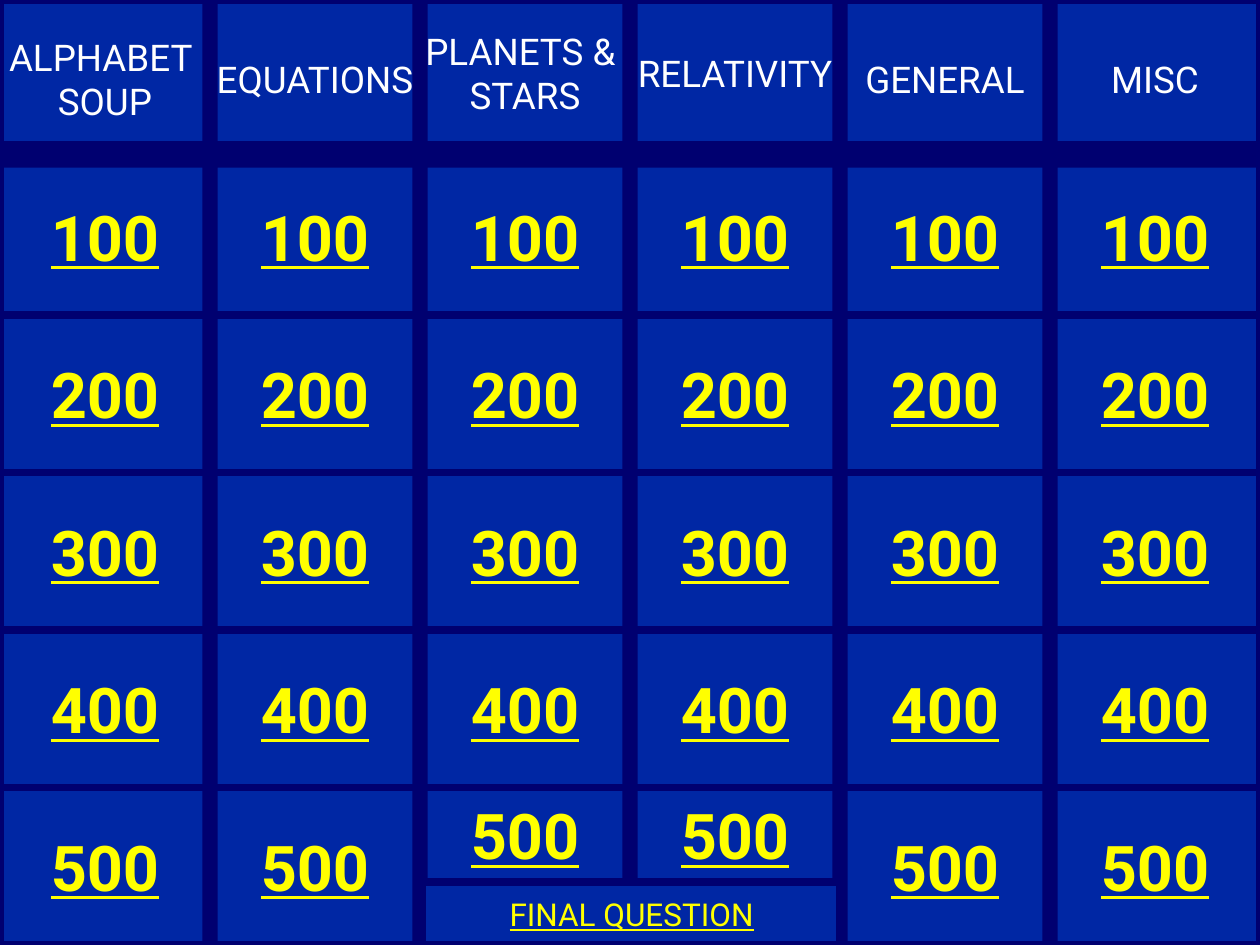
from pptx import Presentation
from pptx.dml.color import RGBColor
from pptx.enum.shapes import MSO_SHAPE
from pptx.enum.text import MSO_ANCHOR, PP_ALIGN
from pptx.util import Inches, Pt

RECTANGLE = MSO_SHAPE.RECTANGLE
BUTTON = MSO_SHAPE.ACTION_BUTTON_CUSTOM
MIDDLE = MSO_ANCHOR.MIDDLE
CENTER = PP_ALIGN.CENTER

# "\v" breaks a line, "\n" starts a paragraph
CATEGORIES = ["ALPHABET \vSOUP", "EQUATIONS", "PLANETS & \nSTARS",
              "RELATIVITY", "GENERAL", "MISC"]
POINTS = ["100", "200", "300", "400", "500"]
FINAL_ROUND = "FINAL QUESTION"

THEME = {
    "font": "Roboto",
    "background": RGBColor(0x10, 0x1C, 0x8A),
    "tile": RGBColor(0x00, 0x27, 0xA4),
    "grid": RGBColor(0x00, 0x00, 0x70),
    "category": {"size": Pt(21), "color": RGBColor(0xFF, 0xFF, 0xFF)},
    "points": {"size": Pt(36), "color": RGBColor(0xFF, 0xFF, 0x00),
               "bold": True, "underline": True},
    "final": {"size": Pt(18), "color": RGBColor(0xFF, 0xFF, 0x00),
              "underline": True},
    "border": Pt(4.5),
}

SLIDE_WIDTH, SLIDE_HEIGHT = 10, 7.5
COLUMN_WIDTH = SLIDE_WIDTH / len(CATEGORIES)
ROW_HEIGHT = SLIDE_HEIGHT / (len(POINTS) + 1)
MIDDLE_COLUMNS = (2, 3)
SHORT_HEADER_HEIGHT = 1.15
FINAL_HEIGHT = 0.5
BAR_WIDTH = 0.12
DIVIDER_TOP, DIVIDER_HEIGHT = 1.12, 0.21


def write_text(shape, text, style):
    frame = shape.text_frame
    frame.word_wrap = False
    frame.vertical_anchor = MIDDLE
    frame.text = text
    for paragraph in frame.paragraphs:
        paragraph.alignment = CENTER
        font = paragraph.font
        font.name = THEME["font"]
        font.size = style["size"]
        font.color.rgb = style["color"]
        font.bold = style.get("bold", False)
        font.underline = style.get("underline", False)


def add_block(slide, kind, left, top, width, height, color):
    shape = slide.shapes.add_shape(
        kind, Inches(left), Inches(top), Inches(width), Inches(height))
    shape.shadow.inherit = False
    shape.fill.solid()
    shape.fill.fore_color.rgb = color
    shape.line.fill.background()
    return shape


def add_tile(slide, kind, left, top, width, height):
    tile = add_block(slide, kind, left, top, width, height, THEME["tile"])
    tile.line.color.rgb = THEME["grid"]
    tile.line.width = THEME["border"]
    return tile


def add_column(slide, index, category):
    """Add a category header and its point buttons; the middle columns leave room for the final round."""
    left = index * COLUMN_WIDTH
    is_middle = index in MIDDLE_COLUMNS
    header_height = SHORT_HEADER_HEIGHT if is_middle else ROW_HEIGHT
    header = add_tile(slide, RECTANGLE, left, 0, COLUMN_WIDTH, header_height)
    write_text(header, category, THEME["category"])
    for row, points in enumerate(POINTS, start=1):
        is_short = is_middle and row == len(POINTS)
        height = ROW_HEIGHT - FINAL_HEIGHT if is_short else ROW_HEIGHT
        button = add_tile(slide, BUTTON, left, row * ROW_HEIGHT, COLUMN_WIDTH, height)
        write_text(button, points, THEME["points"])


def add_final_round(slide):
    left, width = MIDDLE_COLUMNS[0] * COLUMN_WIDTH, len(MIDDLE_COLUMNS) * COLUMN_WIDTH
    top = SLIDE_HEIGHT - FINAL_HEIGHT
    add_tile(slide, RECTANGLE, left + 0.02, top, width - 0.02, FINAL_HEIGHT)
    label = slide.shapes.add_textbox(
        Inches(left + 0.08), Inches(top + 0.16), Inches(3.2), Inches(0.19))
    write_text(label, FINAL_ROUND, THEME["final"])


def main():
    presentation = Presentation()
    presentation.slide_width = Inches(SLIDE_WIDTH)
    presentation.slide_height = Inches(SLIDE_HEIGHT)
    slide = presentation.slides.add_slide(presentation.slide_layouts[6])
    slide.background.fill.solid()
    slide.background.fill.fore_color.rgb = THEME["background"]

    for index, category in enumerate(CATEGORIES):
        add_column(slide, index, category)
    for index in range(1, len(CATEGORIES)):
        add_block(slide, RECTANGLE, index * COLUMN_WIDTH - BAR_WIDTH / 2, 0,
                  BAR_WIDTH, SLIDE_HEIGHT, THEME["grid"])
    add_block(slide, RECTANGLE, 0, DIVIDER_TOP, SLIDE_WIDTH, DIVIDER_HEIGHT,
              THEME["grid"])
    add_final_round(slide)
    presentation.save("out.pptx")


if __name__ == "__main__":
    main()
